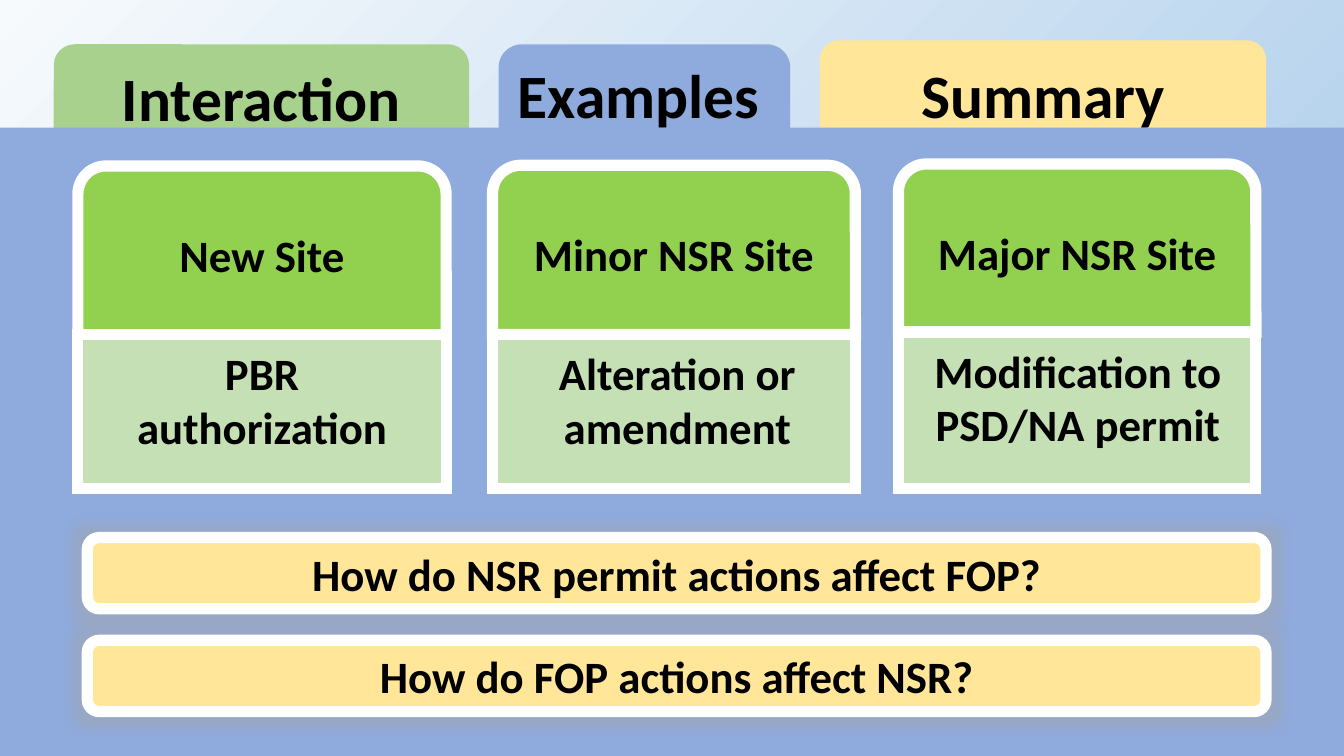
"""Build the Examples slide: three tabs, three site cards and two question bars."""
import dataclasses

import lxml.etree
import pptx
import pptx.dml.color
import pptx.enum.shapes
import pptx.enum.text
import pptx.oxml.ns
import pptx.util

PX = 4572
SHAPES = pptx.enum.shapes.MSO_SHAPE
ANCHOR = pptx.enum.text.MSO_ANCHOR
qn = pptx.oxml.ns.qn


@dataclasses.dataclass(frozen=True)
class Theme:
    font: str = "Calibri"
    tab_size: int = 33
    body_size: int = 24
    border_width: int = 6
    text: str = "000000"
    border: str = "FFFFFF"
    green: str = "A9D18E"
    blue: str = "8FAADC"
    yellow: str = "FFE699"
    card_head: str = "92D050"
    card_body: str = "C5E0B4"
    glow: str = "A5A5A5"
    background: tuple = ((0, "F7FAFD"), (74, "B5D2EC"), (83, "B5D2EC"), (100, "CEE1F2"))


theme = Theme()


def draw_shape(shapes, kind, box, fill, bordered=False):
    shape = shapes.add_shape(kind, *(value * PX for value in box))
    shape.shadow.inherit = False
    shape.fill.solid()
    shape.fill.fore_color.rgb = pptx.dml.color.RGBColor.from_string(fill)
    if bordered:
        shape.line.color.rgb = pptx.dml.color.RGBColor.from_string(theme.border)
        shape.line.width = pptx.util.Pt(theme.border_width)
        outline = shape.element.spPr.find(qn("a:ln"))
        lxml.etree.SubElement(outline, qn("a:miter"), lim="800000")
    else:
        shape.line.fill.background()
    return shape


def write_text(shape, text, size, anchor=ANCHOR.TOP, margins=(20, 10)):
    frame = shape.text_frame
    frame.text = text
    frame.word_wrap = True
    frame.auto_size = pptx.enum.text.MSO_AUTO_SIZE.NONE
    frame.vertical_anchor = anchor
    frame.margin_left = frame.margin_right = margins[0] * PX
    frame.margin_top = frame.margin_bottom = margins[1] * PX
    paragraph = frame.paragraphs[0]
    paragraph.alignment = pptx.enum.text.PP_ALIGN.CENTER
    font = paragraph.runs[0].font
    font.name = theme.font
    font.size = pptx.util.Pt(size)
    font.bold = True
    font.color.rgb = pptx.dml.color.RGBColor.from_string(theme.text)


presentation = pptx.Presentation()
presentation.slide_width = 2000 * PX
presentation.slide_height = 1125 * PX
slide = presentation.slides.add_slide(presentation.slide_layouts[5])

background = slide.background.fill
background.gradient()
background.gradient_angle = 315
stops = slide.element.find(".//" + qn("a:gsLst"))
stops.clear()
for percent, color in theme.background:
    stop = lxml.etree.SubElement(stops, qn("a:gs"), pos=str(percent * 1000))
    lxml.etree.SubElement(stop, qn("a:srgbClr"), val=color)

tabs = [
    ((80, 66, 618, 186), theme.green, None, None),
    ((742, 66, 434, 208), theme.blue, "Examples", (742, 77, 417, 126)),
    ((1220, 60, 664, 170), theme.yellow, "Summary", (1244, 77, 617, 126)),
]
for tab_box, color, label, label_box in tabs:
    draw_shape(slide.shapes, SHAPES.ROUNDED_RECTANGLE, tab_box, color)
    if label:
        text_box = slide.shapes.add_textbox(*(value * PX for value in label_box))
        write_text(text_box, label, theme.tab_size, margins=(14, 8))

draw_shape(slide.shapes, SHAPES.RECTANGLE, (0, 190, 2000, 935), theme.blue)

cards = [
    ("New Site", "PBR authorization", 116, 548, 247, 498, (126, 528)),
    ("Minor NSR Site", "Alteration or amendment", 733, 540, 246, 498, (734, 548)),
    ("Major NSR Site", "Modification to PSD/NA permit", 1337, 532, 244, 494, (1329, 550)),
]
card_bottom = 727
for heading, detail, left, width, top, middle, (text_left, text_width) in cards:
    head = draw_shape(slide.shapes, SHAPES.ROUND_2_SAME_RECTANGLE,
                      (left, top, width, middle - top), theme.card_head, bordered=True)
    write_text(head, heading, theme.body_size, ANCHOR.MIDDLE)
    group = slide.shapes.add_group_shape()
    draw_shape(group.shapes, SHAPES.RECTANGLE,
               (left, middle, width, card_bottom - middle), theme.card_body, bordered=True)
    text_box = group.shapes.add_textbox(text_left * PX, (middle + 7) * PX, text_width * PX, 182 * PX)
    write_text(text_box, detail, theme.body_size)

questions = ["How do NSR permit actions affect FOP?", "How do FOP actions affect NSR?"]
for index, question in enumerate(questions):
    bar = draw_shape(slide.shapes, SHAPES.ROUNDED_RECTANGLE,
                     (130, 800 + 153 * index, 1754, 106), theme.yellow, bordered=True)
    write_text(bar, question, theme.body_size, margins=(14, 8))
    effects = bar.element.spPr.find(qn("a:effectLst"))
    glow = lxml.etree.SubElement(effects, qn("a:glow"), rad=str(28 * PX))
    glow_color = lxml.etree.SubElement(glow, qn("a:srgbClr"), val=theme.glow)
    lxml.etree.SubElement(glow_color, qn("a:alpha"), val="40000")

title = slide.shapes.title
title.left, title.top, title.width, title.height = (value * PX for value in (118, 79, 542, 144))
write_text(title, "Interaction", theme.tab_size, ANCHOR.MIDDLE, margins=(14, 8))
title.text_frame.paragraphs[0].line_spacing = 0.9
slide.shapes.element.append(title.element)

presentation.save("out.pptx")
